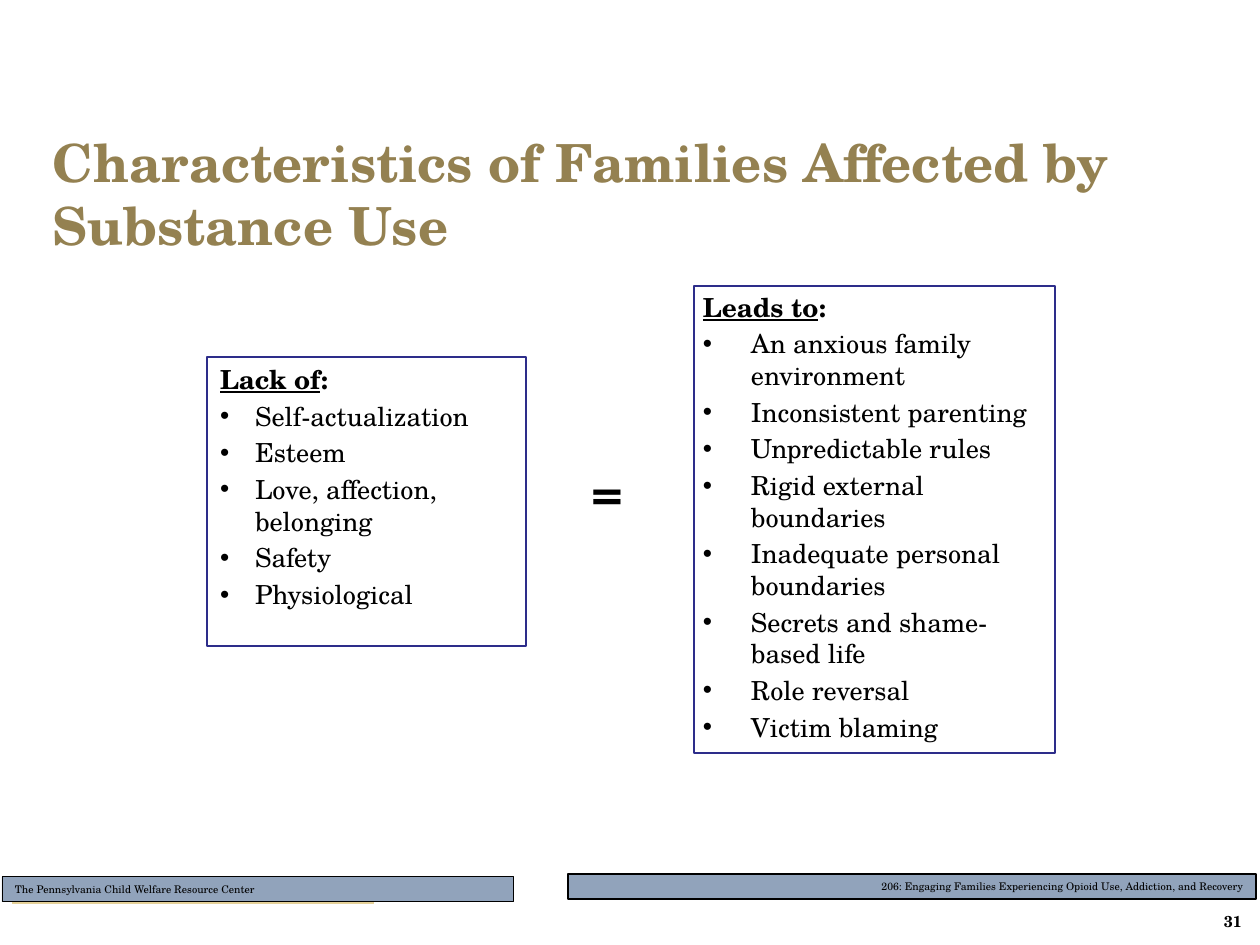
from dataclasses import dataclass

from lxml import etree
from pptx import Presentation, util as u
from pptx.dml.color import RGBColor
from pptx.enum import shapes, text
from pptx.oxml.ns import qn

PX = 914400 / 126
LEFT, MID, RIGHT = text.PP_ALIGN.LEFT, text.PP_ALIGN.CENTER, text.PP_ALIGN.RIGHT
TOP, CENTRE = text.MSO_ANCHOR.TOP, text.MSO_ANCHOR.MIDDLE


@dataclass(frozen=True)
class Theme:
    face: str = "TeX Gyre Schola"
    ink: str = "000000"
    gold: str = "948151"
    pale: str = "E5D199"
    navy: str = "2D2D8A"
    steel: str = "91A3BB"
    head: int = 30
    body: int = 15
    page: int = 9
    foot: int = 6


@dataclass(frozen=True)
class Box:
    x: int
    y: int
    w: int
    h: int


@dataclass(frozen=True)
class Panel:
    box: Box
    head: str
    items: tuple[str, ...]
    dent: int
    pad: tuple[int, int]


@dataclass(frozen=True)
class Bar:
    box: Box
    words: str
    align: text.PP_ALIGN
    edge: float


@dataclass(frozen=True)
class Label:
    box: Box
    words: str
    size: int
    align: text.PP_ALIGN
    anchor: text.MSO_ANCHOR


T = Theme()

PANELS = (
    Panel(Box(207, 357, 319, 289), "Lack of",
          ("Self-actualization", "Esteem", "Love, affection, belonging",
           "Safety", "Physiological"), 35, (13, 6)),
    Panel(Box(694, 286, 361, 467), "Leads to",
          ("An anxious family environment", "Inconsistent parenting",
           "Unpredictable rules", "Rigid external boundaries",
           "Inadequate personal boundaries", "Secrets and shame-based life",
           "Role reversal", "Victim blaming"), 48, (9, 5)),
)
BARS = (
    Bar(Box(568, 874, 688, 25),
        "206: Engaging Families Experiencing Opioid Use, Addiction, and Recovery",
        RIGHT, 0.75),
    Bar(Box(2, 877, 512, 25), "The Pennsylvania Child Welfare Resource Center",
        LEFT, 0.5),
)
LABELS = (
    Label(Box(1115, 908, 140, 26), "31", T.page, RIGHT, CENTRE),
    Label(Box(556, 452, 102, 77), "=", T.head, MID, TOP),
)


def emu(px: int) -> u.Emu:
    return u.Emu(round(px * PX))


def apply(item, **vals) -> None:
    for key, val in vals.items():
        setattr(item, key, val)


def place(shape, box: Box) -> None:
    apply(shape, left=emu(box.x), top=emu(box.y),
          width=emu(box.w), height=emu(box.h))


def area(box: Box) -> tuple[u.Emu, ...]:
    return tuple(emu(n) for n in (box.x, box.y, box.w, box.h))


def edge(shape, color: str, width: float) -> None:
    shape.line.color.rgb = RGBColor.from_string(color)
    shape.line.width = u.Pt(width)


def frame(shape, anchor: text.MSO_ANCHOR, pad: tuple[int, int] = (13, 6)):
    body = shape.text_frame
    side, end = map(emu, pad)
    apply(body, word_wrap=True, auto_size=text.MSO_AUTO_SIZE.NONE,
          vertical_anchor=anchor, margin_left=side, margin_right=side,
          margin_top=end, margin_bottom=end)
    return body


def write(par, words: str, size: int, color: str = T.ink, **vals) -> None:
    run = par.add_run()
    run.text = words
    apply(run.font, name=T.face, size=u.Pt(size), **vals)
    run.font.color.rgb = RGBColor.from_string(color)


def bullet(par, dent: int) -> None:
    props = par._p.get_or_add_pPr()
    props.set("marL", str(emu(dent)))
    props.set("indent", str(-emu(dent)))
    if dent:
        etree.SubElement(props, qn("a:buFont")).set("typeface", "Arial")
        etree.SubElement(props, qn("a:buChar")).set("char", "•")
    else:
        etree.SubElement(props, qn("a:buNone"))


def draw_panel(shape, panel: Panel) -> None:
    place(shape, panel.box)
    shape.fill.background()
    edge(shape, T.navy, 0.75)
    body = frame(shape, TOP, panel.pad)
    par = body.paragraphs[0]
    bullet(par, 0)
    apply(par, alignment=LEFT, space_before=u.Pt(0))
    write(par, panel.head, T.body, bold=True, underline=True)
    write(par, ":", T.body, bold=True, underline=False)
    for item in panel.items:
        par = body.add_paragraph()
        bullet(par, panel.dent)
        apply(par, alignment=LEFT, space_before=u.Pt(T.body * 0.2))
        write(par, item, T.body, bold=False)


def add_rect(slide, box: Box):
    shape = slide.shapes.add_shape(shapes.MSO_SHAPE.RECTANGLE, *area(box))
    shape.shadow.inherit = False
    return shape


def draw_bar(slide, bar: Bar) -> None:
    shape = add_rect(slide, bar.box)
    shape.fill.solid()
    shape.fill.fore_color.rgb = RGBColor.from_string(T.steel)
    edge(shape, T.ink, bar.edge)
    par = frame(shape, TOP).paragraphs[0]
    par.alignment = bar.align
    write(par, bar.words, T.foot)


def draw_label(slide, label: Label) -> None:
    shape = slide.shapes.add_textbox(*area(label.box))
    par = frame(shape, label.anchor).paragraphs[0]
    par.alignment = label.align
    write(par, label.words, label.size, bold=True)


def main() -> None:
    deck = Presentation()
    apply(deck, slide_width=u.Inches(10), slide_height=u.Inches(7.5))
    slide = deck.slides.add_slide(deck.slide_layouts[1])

    # Footer bars and rule
    for bar in BARS:
        draw_bar(slide, bar)
    rule = slide.shapes.add_connector(
        shapes.MSO_CONNECTOR.STRAIGHT, emu(12), emu(903), emu(374), emu(903))
    edge(rule, T.pale, 0.75)
    etree.SubElement(rule._element.spPr, qn("a:effectLst"))

    # Title
    title = slide.shapes.title
    place(title, Box(40, 152, 1134, 82))
    par = frame(title, CENTRE).paragraphs[0]
    par.alignment = LEFT
    write(par, "Characteristics of Families Affected by Substance Use",
          T.head, T.gold, bold=True)

    # Cause and effect lists
    cause, effect = PANELS
    draw_panel(slide.placeholders[1], cause)
    draw_panel(add_rect(slide, effect.box), effect)

    # Page number and equals sign
    for label in LABELS:
        draw_label(slide, label)

    deck.save("out.pptx")


if __name__ == "__main__":
    main()
